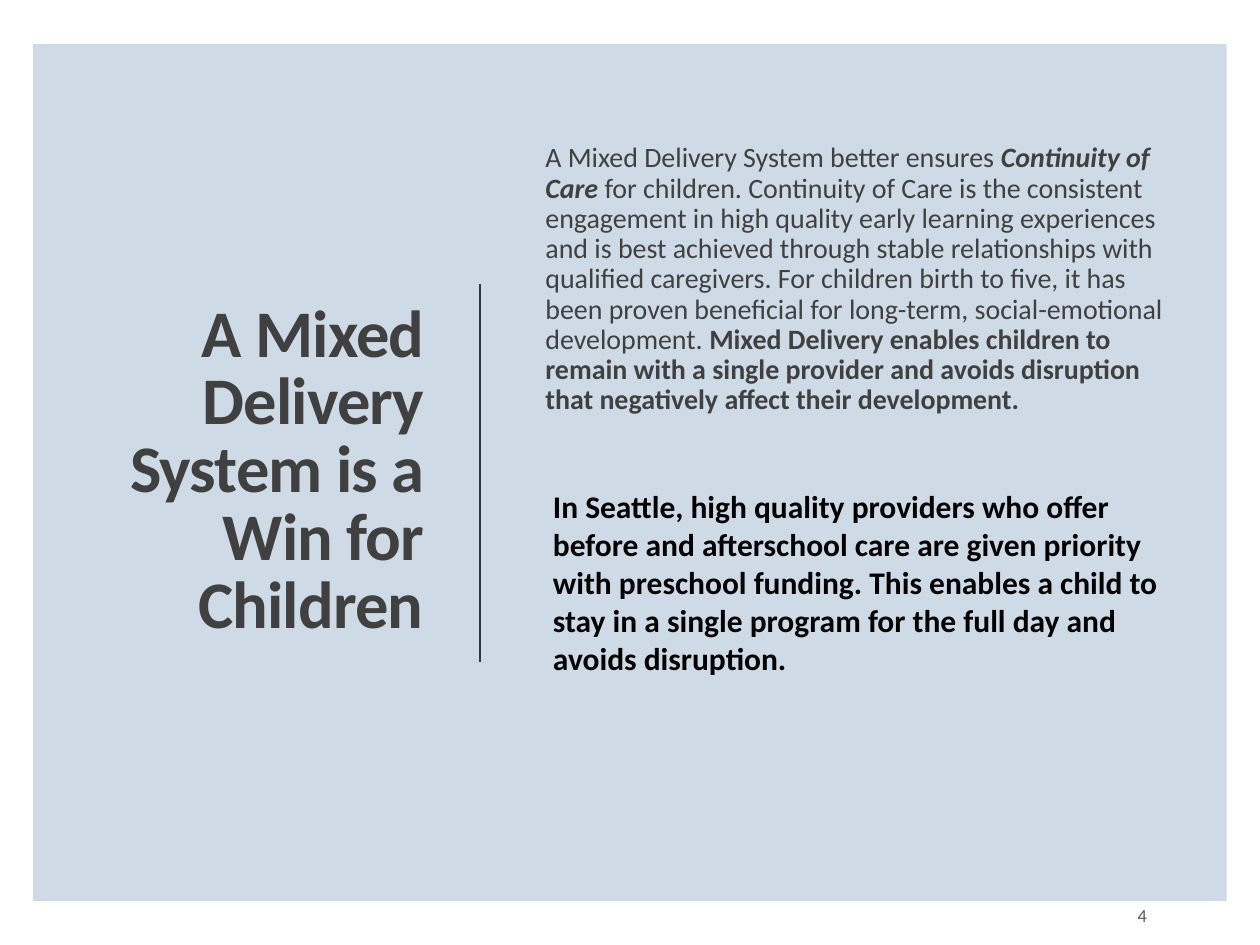
import pptx
import pptx.util
import pptx.dml.color
import pptx.enum.shapes
import pptx.enum.text
import pptx.oxml.ns
import lxml.etree

Pt = pptx.util.Pt
ALIGN = pptx.enum.text.PP_ALIGN
ANCHOR = pptx.enum.text.MSO_ANCHOR


def color(value):
    return pptx.dml.color.RGBColor.from_string(value)


def add_text(s, box, runs, size, hex_color, align=ALIGN.LEFT, anchor=ANCHOR.MIDDLE):
    tf = s.shapes.add_textbox(*map(Pt, box)).text_frame
    tf.word_wrap = True
    tf.vertical_anchor = anchor
    p = tf.paragraphs[0]
    p.alignment = align
    p.font.name = "Calibri"
    p.font.size = Pt(size)
    p.font.color.rgb = color(hex_color)
    for text, bold, italic in runs:
        r = p.add_run()
        r.text = text
        r.font.bold = bold
        r.font.italic = italic
    return tf


def add_panel(s, box):
    sp = s.shapes.add_shape(pptx.enum.shapes.MSO_SHAPE.RECTANGLE, *map(Pt, box))
    sp.shadow.inherit = False
    sp.fill.solid()
    sp.fill.fore_color.rgb = color("CEDBE6")
    sp.line.fill.background()


def add_title(s, box):
    left, top, width, height = box
    text = "A Mixed Delivery System is a Win for Children"
    tf = add_text(s, box, [(text, True, False)], 38, "404040", ALIGN.RIGHT)
    p = tf.paragraphs[0]
    p.line_spacing = 0.85
    p.runs[0].font._element.set("spc", "-50")

    x = left + width + 25.2
    middle = top + height / 2
    rule = s.shapes.add_connector(
        pptx.enum.shapes.MSO_CONNECTOR.STRAIGHT,
        Pt(x), Pt(middle - 108), Pt(x), Pt(middle + 108))
    rule.line.color.rgb = color("373545")
    rule.line.width = Pt(1.5)
    lxml.etree.SubElement(rule._element.spPr, pptx.oxml.ns.qn("a:effectLst"))


def add_argument(s, box):
    left, top, width, height = box
    runs = [
        ("A Mixed Delivery System better ensures ", False, False),
        ("Continuity of Care ", True, True),
        ("for children. Continuity of Care is the consistent engagement in high "
         "quality early learning experiences and is best achieved through stable "
         "relationships with qualified caregivers. For children birth to five, it "
         "has been proven beneficial for long-term, social-emotional development. ",
         False, False),
        ("Mixed Delivery enables children to remain with a single provider and "
         "avoids disruption that negatively affect their development.", True, False),
    ]
    tf = add_text(s, (left, top, width, 194.4), runs, 16, "404040", anchor=ANCHOR.TOP)
    tf.margin_top = Pt(9.5)
    tf.margin_right = 0
    tf.paragraphs[0].line_spacing = 0.9

    example = ("In Seattle, high quality providers who offer before and afterschool "
               "care are given priority with preschool funding. This enables a child "
               "to stay in a single program for the full day and avoids disruption.")
    add_text(s, (left + 4.3, top + 202.3, width, height - 202.3),
             [(example, True, False)], 18, "000000", anchor=ANCHOR.TOP)


def add_page_number(s, box):
    add_text(s, box, [("4", False, False)], 10.5, "595959", ALIGN.RIGHT)


def main():
    prs = pptx.Presentation()
    prs.slide_width = Pt(720)
    prs.slide_height = Pt(540)
    s = prs.slides.add_slide(prs.slide_layouts[6])
    add_panel(s, (18.9, 25.2, 682, 489.6))
    add_title(s, (56.9, 75.6, 192.2, 388.8))
    add_argument(s, (304.6, 72.7, 362.2, 319))
    add_page_number(s, (584.6, 508.3, 77.8, 28.8))
    prs.save("out.pptx")


if __name__ == "__main__":
    main()
